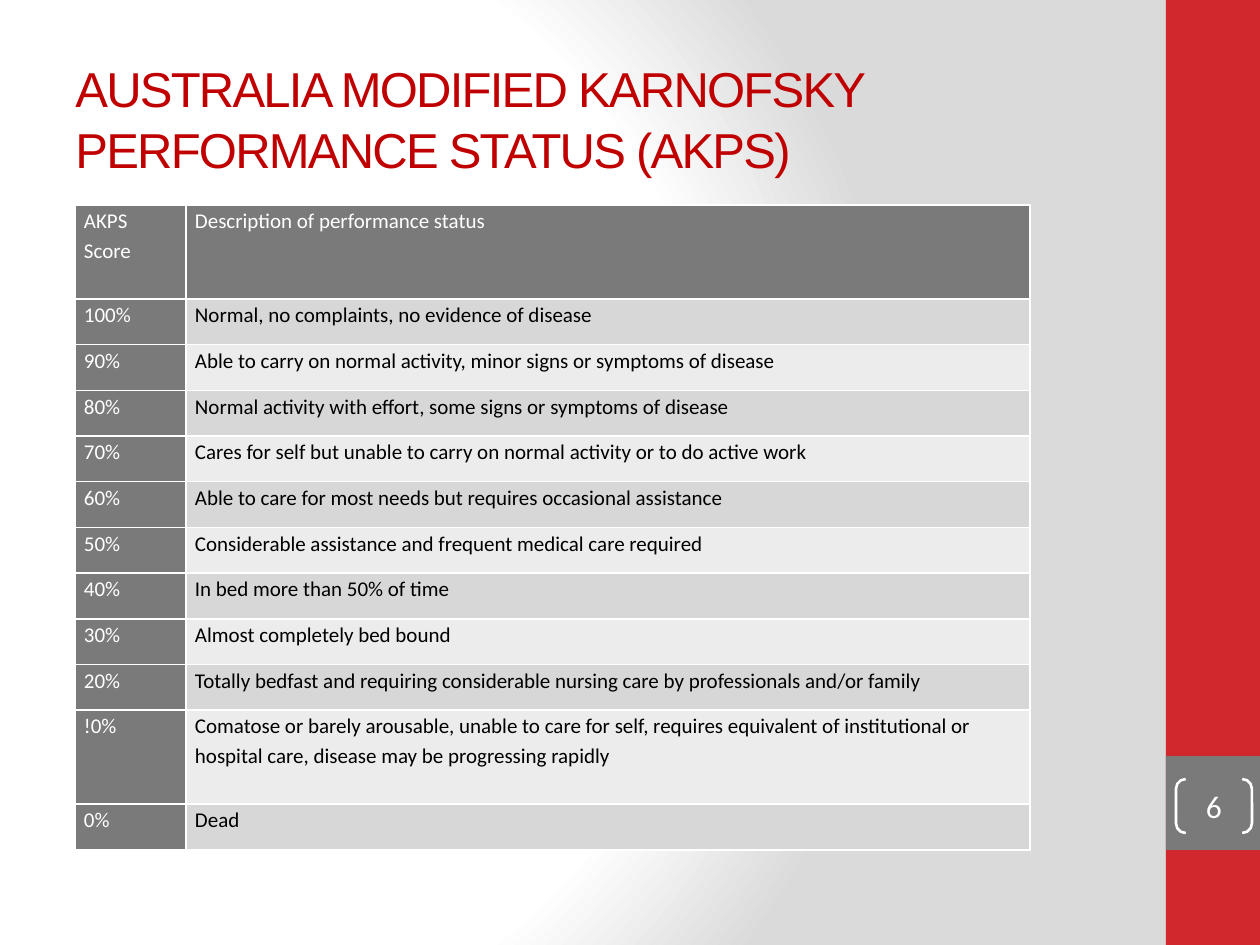
from lxml import etree
from pptx import Presentation, oxml, util as u
from pptx.dml.color import RGBColor
from pptx.enum import shapes, text
from pptx.oxml.ns import nsdecls, qn

WHITE = RGBColor(0xFF, 0xFF, 0xFF)
BLACK = RGBColor(0, 0, 0)
RED = RGBColor(0xD1, 0x28, 0x2E)
DEEP = RGBColor(0xC0, 0, 0)
GREY = RGBColor(0x7A, 0x7A, 0x7A)
MID = RGBColor(0xD7, 0xD7, 0xD7)
PALE = RGBColor(0xEC, 0xEC, 0xEC)
EDGE = RGBColor(0xDA, 0xDA, 0xDA)

HEAD = ("AKPS Score", "Description of performance status")
ROWS = [
    ("100%", "Normal, no complaints, no evidence of disease"),
    ("90%", "Able to carry on normal activity, minor signs or symptoms of disease"),
    ("80%", "Normal activity with effort, some signs or symptoms of disease"),
    ("70%", "Cares for self but unable to carry on normal activity or to do active work"),
    ("60%", "Able to care for most needs but requires occasional assistance"),
    ("50%", "Considerable assistance and frequent medical care required"),
    ("40%", "In bed more than 50% of time"),
    ("30%", "Almost completely bed bound"),
    ("20%", "Totally bedfast and requiring considerable nursing care by professionals and/or family"),
    ("!0%", "Comatose or barely arousable, unable to care for self, requires equivalent of "
            "institutional or hospital care, disease may be progressing rapidly"),
    ("0%", "Dead"),
]
TALL = (0, 10)


def px(n):
    return u.Emu(round(n * 914400 / 126))


def style(par, face, size, color):
    par.font.name, par.font.size = face, u.Pt(size)
    par.font.color.rgb = color


def inset(item, side, top):
    item.margin_left = item.margin_right = side
    item.margin_top = item.margin_bottom = top


def backdrop(slide):
    stops = "".join(
        f'<a:gs pos="{pos * 1000}"><a:srgbClr val="{color}"/></a:gs>'
        for pos, color in ((0, WHITE), (75, WHITE), (100, EDGE)))
    back = oxml.parse_xml(
        f'<p:bg {nsdecls("p", "a")}><p:bgPr><a:gradFill rotWithShape="1">'
        f'<a:gsLst>{stops}</a:gsLst><a:path path="circle">'
        '<a:fillToRect l="20000" t="50000" r="100000" b="50000"/></a:path>'
        '</a:gradFill><a:effectLst/></p:bgPr></p:bg>')
    slide.element.cSld.insert(0, back)


def block(slide, x, y, w, h, color):
    rect = slide.shapes.add_shape(
        shapes.MSO_SHAPE.RECTANGLE, px(x), px(y), px(w), px(h))
    rect.shadow.inherit = False
    rect.fill.solid()
    rect.fill.fore_color.rgb = color
    rect.line.fill.background()


def sidebar(slide, x, y, w, h):
    block(slide, x, y, w, h, RED)
    top = y + h * 4 // 5
    block(slide, x, top, w, w, GREY)
    badge = slide.shapes.add_shape(
        shapes.MSO_SHAPE.DOUBLE_BRACKET, px(x + 10), px(top + 23), px(76), px(54))
    badge.adjustments[0] = 0.18
    badge.shadow.inherit = False
    badge.fill.background()
    badge.line.color.rgb = WHITE
    badge.line.width = u.Pt(1.5)
    frame = badge.text_frame
    inset(frame, 0, 0)
    frame.vertical_anchor = text.MSO_ANCHOR.MIDDLE
    par = frame.paragraphs[0]
    par.text = "6"
    par.alignment = text.PP_ALIGN.CENTER
    style(par, "Calibri", 18, WHITE)


def title(slide, x, y, w, h):
    frame = slide.shapes.add_textbox(px(x), px(y), px(w), px(h)).text_frame
    frame.word_wrap = True
    frame.vertical_anchor = text.MSO_ANCHOR.MIDDLE
    par = frame.paragraphs[0]
    par.line_spacing = 1.05
    run = par.add_run()
    run.text = "AUSTRALIA MODIFIED KARNOFSKY PERFORMANCE STATUS (AKPS)"
    style(par, "Arial", 28, DEEP)
    run.font.language_id = None
    run.font._element.set("spc", "-100")


def border(cell):
    props = cell._tc.get_or_add_tcPr()
    for side in "LRTB":
        line = etree.SubElement(props, qn(f"a:ln{side}"), w=str(u.Pt(1)))
        fill = etree.SubElement(line, qn("a:solidFill"))
        etree.SubElement(fill, qn("a:srgbClr"), val=str(WHITE))


def fill_cell(cell, words, back, ink):
    border(cell)
    cell.fill.solid()
    cell.fill.fore_color.rgb = back
    inset(cell, px(9), 0)
    par = cell.text_frame.paragraphs[0]
    par.text = words
    par.line_spacing = 1.15
    style(par, "Calibri", 12, ink)


def scores(slide, x, y, w, h):
    data = [HEAD] + ROWS
    grid = slide.shapes.add_table(len(data), 2, px(x), px(y), px(w), px(h)).table
    first, big = 111, 94
    small = (h - big * len(TALL)) / (len(data) - len(TALL))
    grid.columns[0].width, grid.columns[1].width = px(first), px(w - first)
    for i, (score, words) in enumerate(data):
        grid.rows[i].height = px(big if i in TALL else small)
        fill_cell(grid.cell(i, 0), score, GREY, WHITE)
        back = GREY if i == 0 else MID if i % 2 else PALE
        fill_cell(grid.cell(i, 1), words, back, BLACK if i else WHITE)


def main():
    deck = Presentation()
    deck.slide_width, deck.slide_height = px(1260), px(945)
    slide = deck.slides.add_slide(deck.slide_layouts[6])
    backdrop(slide)
    sidebar(slide, 1166, 0, 94, 945)
    title(slide, 63, 38, 1050, 158)
    scores(slide, 75, 205, 955, 645)
    deck.save("out.pptx")


if __name__ == "__main__":
    main()
